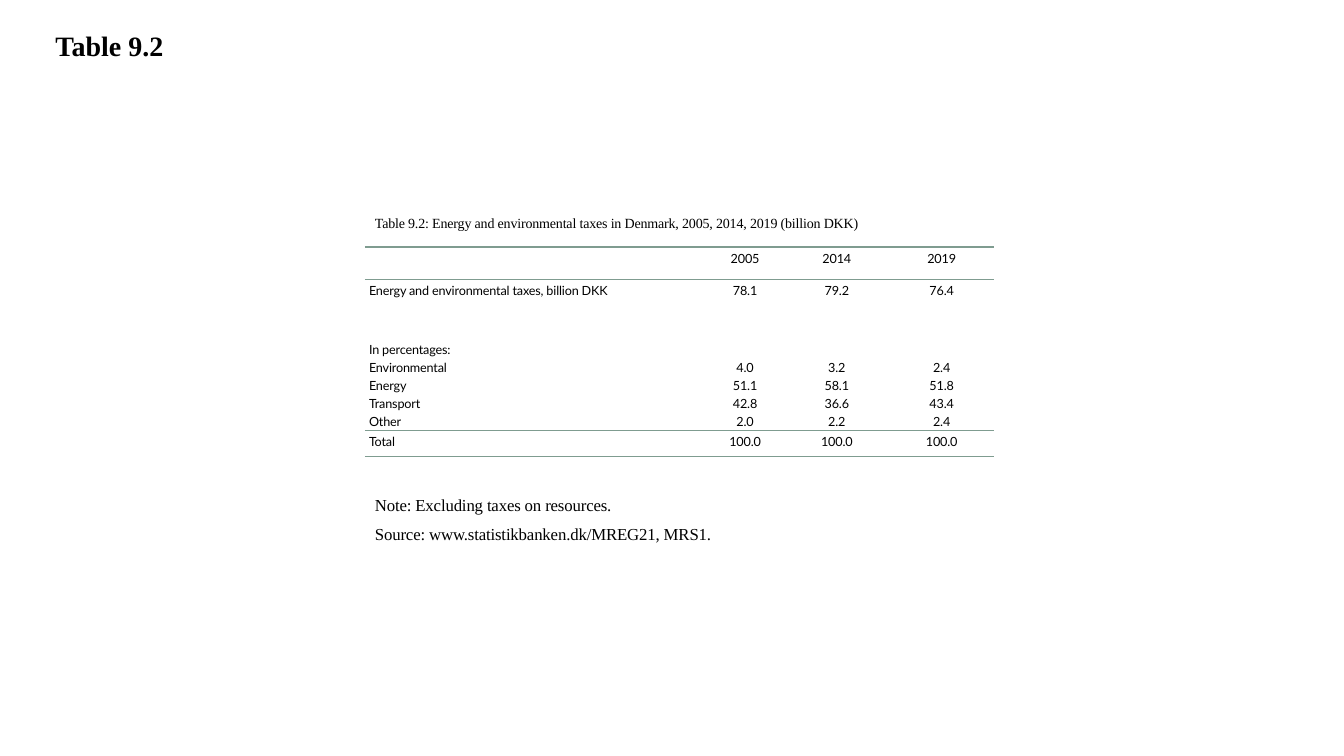
import pptx
import pptx.dml.color
import pptx.enum.text
import pptx.oxml
import pptx.oxml.ns
import pptx.util

Inches, Pt = pptx.util.Inches, pptx.util.Pt
ALIGN = pptx.enum.text.PP_ALIGN
ANCHOR = pptx.enum.text.MSO_ANCHOR
SERIF, SANS = "Times New Roman", "Lato"
INK, RULE = "000000", "7F9C90"

COLUMN_WIDTHS = [3.38, 0.78, 1.04, 1.04]
ROW_HEIGHTS = [0.26, 0.26, 1.24, 0.26]
TAX_ROWS = [
    ["", "2005", "2014", "2019"],
    ["Energy and environmental taxes, billion DKK", "78.1", "79.2", "76.4"],
    ["In percentages:\nEnvironmental\nEnergy\nTransport\nOther",
     "4.0\n51.1\n42.8\n2.0", "3.2\n58.1\n36.6\n2.2", "2.4\n51.8\n43.4\n2.4"],
    ["Total", "100.0", "100.0", "100.0"],
]
RULED_EDGES = {(0, "T"), (0, "B"), (1, "T"), (2, "B"), (3, "T"), (3, "B")}


def color(hex_string):
    return pptx.dml.color.RGBColor.from_string(hex_string)


def write(frame, text, font=SERIF, size=12, bold=False, align=ALIGN.LEFT,
          line_spacing=None, before=0, between=0, after=0, tracking=0):
    """Fill a text frame, one paragraph for each line of text."""
    lines = text.split("\n")
    for index, line in enumerate(lines):
        paragraph = frame.paragraphs[0] if index == 0 else frame.add_paragraph()
        paragraph.alignment = align
        paragraph.line_spacing = line_spacing
        paragraph.space_before = Pt(before if index else 0)
        paragraph.space_after = Pt(after if index == len(lines) - 1 else between)
        run = paragraph.add_run()
        run.text = line
        run.font.name, run.font.size, run.font.bold = font, Pt(size), bold
        run.font.color.rgb = color(INK)
        if tracking:
            run.font._element.set("spc", str(round(tracking * 100)))


def add_title(slide, text, left, top, width, height):
    title = slide.shapes.title
    title.left, title.top = Inches(left), Inches(top)
    title.width, title.height = Inches(width), Inches(height)
    title.text_frame.vertical_anchor = ANCHOR.TOP
    title.text_frame.auto_size = pptx.enum.text.MSO_AUTO_SIZE.NONE
    write(title.text_frame, text, size=20, bold=True, line_spacing=0.9)


def add_text(slide, text, left, top, width, height, **text_format):
    box = slide.shapes.add_textbox(*map(Inches, (left, top, width, height)))
    box.text_frame.word_wrap = True
    write(box.text_frame, text, tracking=-0.1, **text_format)


def set_borders(cell, row):
    """Rule the listed horizontal edges and clear all the others."""
    properties = cell._tc.get_or_add_tcPr()
    for position, side in enumerate("LRTB"):
        fill = (f'<a:solidFill><a:srgbClr val="{RULE}"/></a:solidFill>'
                if (row, side) in RULED_EDGES else "<a:noFill/>")
        properties.insert(position, pptx.oxml.parse_xml(
            f'<a:ln{side} {pptx.oxml.ns.nsdecls("a")} w="{Pt(1)}">{fill}</a:ln{side}>'))


def add_tax_table(slide, left, top):
    shape = slide.shapes.add_table(
        len(ROW_HEIGHTS), len(COLUMN_WIDTHS), Inches(left), Inches(top),
        Inches(sum(COLUMN_WIDTHS)), Inches(sum(ROW_HEIGHTS)))
    table = shape.table
    table.first_row = table.horz_banding = False
    for column, width in zip(table.columns, COLUMN_WIDTHS):
        column.width = Inches(width)
    for row, (height, texts) in enumerate(zip(ROW_HEIGHTS, TAX_ROWS)):
        table.rows[row].height = Inches(height)
        for column, text in enumerate(texts):
            cell = table.cell(row, column)
            cell.margin_left = cell.margin_right = Inches(0.04)
            cell.margin_top = cell.margin_bottom = Inches(0.01)
            cell.vertical_anchor = ANCHOR.BOTTOM if "\n" in text else ANCHOR.TOP
            cell.fill.background()
            set_borders(cell, row)
            write(cell.text_frame, text, font=SANS, size=9, tracking=-0.1,
                  align=ALIGN.CENTER if column else ALIGN.JUSTIFY,
                  line_spacing=Pt(12.8))


def build_table_slide(presentation):
    slide = presentation.slides.add_slide(presentation.slide_layouts[5])
    left, text_width = 3.62, 6.66
    add_title(slide, "Table 9.2", 0.45, 0.27, 1.98, 0.97)
    # Caption, table and notes share one left edge
    add_text(slide, "Table 9.2: Energy and environmental taxes in Denmark, "
             "2005, 2014, 2019 (billion DKK)", left, 2.09, text_width, 0.26,
             size=10, align=ALIGN.JUSTIFY, line_spacing=Pt(11), after=6)
    add_tax_table(slide, left, 2.45)
    add_text(slide, "Note: Excluding taxes on resources.\n"
             "Source: www.statistikbanken.dk/MREG21, MRS1.",
             left, 4.86, text_width, 0.59, before=2, between=4, after=14.5)


def main():
    presentation = pptx.Presentation()
    presentation.slide_width = Inches(13.33)
    presentation.slide_height = Inches(7.5)
    build_table_slide(presentation)
    presentation.save("out.pptx")


if __name__ == "__main__":
    main()
